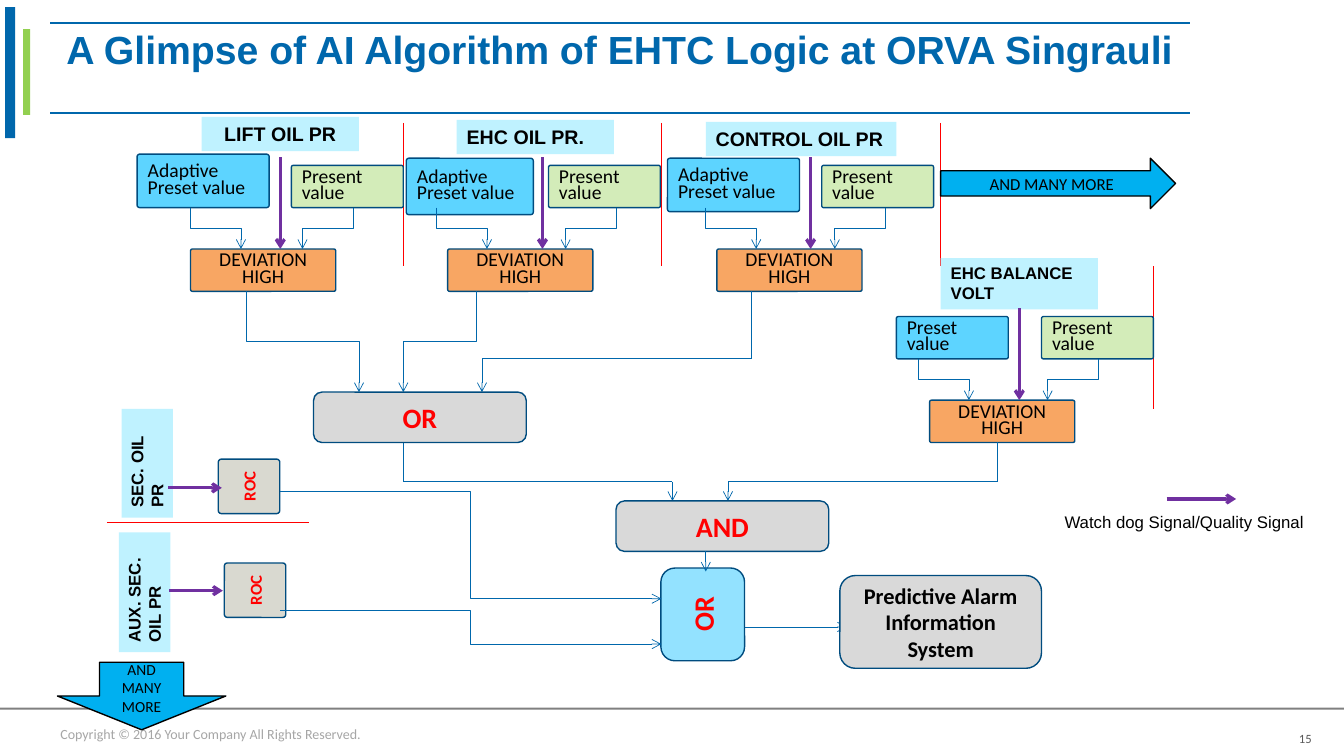
from dataclasses import dataclass
from itertools import pairwise
from typing import Optional

from lxml.etree import SubElement
from pptx import Presentation
from pptx.dml.color import RGBColor
from pptx.enum.shapes import MSO_CONNECTOR as CONN, MSO_SHAPE as SHP
from pptx.enum.text import MSO_ANCHOR as ANC, PP_ALIGN as AL
from pptx.oxml.ns import qn
from pptx.util import Inches, Pt

COLORS = {
    "blue": "0067AC", "edge": "004C7F", "green": "92D050", "gray": "808080",
    "preset": "5DD4FF", "present": "D3ECB9", "deviation": "F8A663",
    "label": "BFF2FF", "gate": "D9D9D9", "roc": "D9D9D0", "or": "93E2FF",
    "arrow": "00B0F0", "red": "FF0000", "purple": "7030A0", "black": "000000",
    "footer": "A6A6A6", "number": "595959",
}


@dataclass
class Style:
    size: float = 14
    font: str = "Calibri"
    color: str = "black"
    bold: bool = False
    align: AL = AL.LEFT
    anchor: ANC = ANC.MIDDLE
    spacing: Optional[float] = None
    insets: tuple = (0.1, 0.05, 0.1, 0.05)


@dataclass
class Box:
    text: str
    at: tuple
    fill: str
    style: Style
    shape: SHP = SHP.ROUNDED_RECTANGLE
    line: Optional[str] = "edge"
    corner: Optional[float] = None
    turn: float = 0


@dataclass
class Signal:
    name: str
    label_at: tuple
    label_style: Style
    preset: str
    preset_at: tuple
    present_x: float
    deviation: str
    deviation_x: float
    feeds: tuple
    watchdog_x: float
    divider: tuple
    drop: float = 0


VALUE = Style(spacing=0.7)
DEVIATION = Style(align=AL.CENTER, spacing=0.7)
LABEL = Style(font="Arial", bold=True, anchor=ANC.TOP)
CENTER_LABEL = Style(font="Arial", bold=True, anchor=ANC.TOP, align=AL.CENTER)
SMALL_LABEL = Style(12, "Arial", bold=True, anchor=ANC.TOP)
GATE = Style(20, color="red", bold=True, align=AL.CENTER)
ROC = Style(12, color="red", bold=True, align=AL.CENTER)

prs = Presentation()
prs.slide_width, prs.slide_height = Inches(13.33), Inches(7.5)
slide = prs.slides.add_slide(prs.slide_layouts[6])


def rgb(name: str) -> RGBColor:
    return RGBColor.from_string(COLORS[name])


def write(tf, text: str, st: Style, wrap: bool = True) -> None:
    left, top, right, bottom = map(Inches, st.insets)
    frame = {"word_wrap": wrap, "vertical_anchor": st.anchor, "margin_left": left,
             "margin_top": top, "margin_right": right, "margin_bottom": bottom}
    for key, value in frame.items():
        setattr(tf, key, value)
    for i, line in enumerate(text.split("\n")):
        p = tf.add_paragraph() if i else tf.paragraphs[0]
        p.alignment = st.align
        p.line_spacing = st.spacing
        r = p.add_run()
        r.text = line
        for key, value in {"size": Pt(st.size), "name": st.font, "bold": st.bold}.items():
            setattr(r.font, key, value)
        r.font.color.rgb = rgb(st.color)


def add_text(text: str, at: tuple, st: Style, wrap: bool = True) -> None:
    write(slide.shapes.add_textbox(*map(Inches, at)).text_frame, text, st, wrap)


def add_box(b: Box) -> None:
    s = slide.shapes.add_shape(b.shape, *map(Inches, b.at))
    s.shadow.inherit = False
    s.rotation = b.turn
    s.fill.solid()
    s.fill.fore_color.rgb = rgb(b.fill)
    if b.line:
        s.line.color.rgb = rgb(b.line)
        s.line.width = Pt(1)
    else:
        s.line.fill.background()
    if b.corner is not None:
        s.adjustments[0] = b.corner
    if b.text:
        write(s.text_frame, b.text, b.style)


def add_line(start: tuple, end: tuple, color: str = "blue", width: float = 0.5,
             arrow: bool = False, kind: CONN = CONN.STRAIGHT):
    c = slide.shapes.add_connector(kind, *map(Inches, (*start, *end)))
    c.line.color.rgb = rgb(color)
    c.line.width = Pt(width)
    pr = c.element.spPr
    if arrow:
        SubElement(pr.find(qn("a:ln")), qn("a:tailEnd"), type="arrow")
    SubElement(pr, qn("a:effectLst"))
    return c


def add_drop(start: tuple, end: tuple) -> None:
    """Elbow arrow that leaves and arrives vertically."""
    (x1, y1), (x2, y2) = start, end
    cx, cy = (x1 + x2) / 2, (y1 + y2) / 2
    w, h = y2 - y1, abs(x2 - x1)
    c = add_line((cx - w / 2, cy - h / 2), (cx + w / 2, cy + h / 2),
                 arrow=True, kind=CONN.ELBOW)
    xfrm = c.element.spPr.find(qn("a:xfrm"))
    xfrm.set("rot", str((270 if x2 > x1 else 90) * 60000))
    if x2 > x1:
        xfrm.set("flipH", "1")


def add_route(*points: tuple) -> None:
    for start, end in pairwise(points):
        add_line(start, end, arrow=end == points[-1])


def add_watchdog(start: tuple, end: tuple) -> None:
    add_line(start, end, "purple", 2.25, True)


def add_signal(g: Signal) -> None:
    top, dev_y = 1.64 + g.drop, 2.47 + g.drop
    x, y = g.divider
    add_line((x, y), (x, y + 1.42), "red")
    add_box(Box(g.name, g.label_at, "label", g.label_style, SHP.RECTANGLE, None))
    add_box(Box(g.preset, g.preset_at, "preset", VALUE, corner=0.045))
    add_box(Box("Present value", (g.present_x, top, 1.11, 0.42), "present", VALUE, corner=0.045))
    add_box(Box(g.deviation, (g.deviation_x, dev_y, 1.44, 0.42), "deviation",
                DEVIATION, corner=0.045))
    for feed, step in zip(g.feeds, (0.5, -0.5)):
        add_drop((feed, top + 0.42), (feed + step, dev_y))
    add_watchdog((g.watchdog_x, 1.56 + g.drop), (g.watchdog_x, dev_y))


# Frame, title and footer
for at, color in (((0, 7.02, 13.33, 0.02), "gray"), ((0.23, 0.29, 0.07, 0.85), "green"),
                  ((0.05, 0.07, 0.1, 1.3), "blue")):
    add_box(Box("", at, color, VALUE, SHP.RECTANGLE, None))
for y in (0.23, 1.12):
    add_line((0.5, y), (11.8, y), width=1.5)
add_text("A Glimpse of AI Algorithm of EHTC Logic at ORVA Singrauli", (0.56, 0.25, 11.24, 0.73),
         Style(28, "Arial", "blue", True, anchor=ANC.TOP, spacing=0.9))
add_text("Copyright © 2016 Your Company All Rights Reserved.", (0.5, 7.15, 12.52, 0.27),
         Style(10, color="footer"))
add_text("15", (12.46, 7.17, 0.55, 0.25),
         Style(9, color="number", align=AL.RIGHT, anchor=ANC.TOP, insets=(0.08, 0.08, 0, 0)))

# Oil pressure and balance signals
ADAPTIVE, HIGH = "Adaptive Preset value", "DEVIATION HIGH"
for signal in (
    Signal("LIFT OIL PR", (2, 1.16, 1.56, 0.34), CENTER_LABEL, ADAPTIVE, (1.36, 1.53, 1.31, 0.53),
           2.89, "DEVIATION\nHIGH", 1.89, (1.89, 3.5), 2.78, (4, 1.22)),
    Signal("EHC OIL PR.", (4.53, 1.19, 1.56, 0.34), LABEL, ADAPTIVE, (4.03, 1.57, 1.26, 0.56),
           5.44, HIGH, 4.44, (4.33, 6.11), 5.38, (6.56, 1.22)),
    Signal("CONTROL OIL PR", (7, 1.21, 1.89, 0.34), LABEL, ADAPTIVE, (6.62, 1.57, 1.31, 0.53),
           8.15, HIGH, 7.11, (7, 8.78), 8.04, (9.33, 1.22)),
    Signal("EHC BALANCE VOLT", (9.33, 2.56, 1.56, 0.51), SMALL_LABEL, "Preset value",
           (8.89, 3.14, 1.11, 0.42), 10.33, HIGH, 9.22, (9.11, 10.89), 10.11, (11.44, 2.64), 1.5),
):
    add_signal(signal)

# Links between the gates
add_drop((2.44, 2.89), (3.56, 3.89))
add_drop((4.72, 2.89), (4, 3.89))
add_route((7.45, 2.89), (7.45, 3.56), (4.78, 3.56), (4.78, 3.89))
add_route((9.89, 4.39), (9.89, 4.78), (7.22, 4.78), (7.22, 4.97))
add_route((4, 4.39), (4, 4.78), (6.67, 4.78), (6.67, 4.97))
add_route((7.33, 6.22), (8.4, 6.22))

# Gates, rate-of-change blocks and result
for box in (
    Box("OR", (3.11, 3.89, 2.11, 0.5), "gate", GATE),
    Box("AND", (6.11, 4.97, 2.11, 0.5), "gate", GATE),
    Box("OR", (6.51, 5.68, 0.92, 0.83), "or", GATE, turn=270),
    Box("Predictive Alarm Information System", (8.33, 5.71, 2, 0.92), "gate",
        Style(16, bold=True, align=AL.CENTER)),
    Box("SEC. OIL PR", (0.92, 4.34, 1.08, 0.51), "label", SMALL_LABEL, SHP.RECTANGLE, None, turn=270),
    Box("AUX. SEC. OIL PR", (0.84, 5.62, 1.19, 0.51), "label", SMALL_LABEL, SHP.RECTANGLE, None,
        turn=270),
    Box("ROC", (2.2, 4.52, 0.54, 0.61), "roc", ROC, corner=0.056, turn=270),
    Box("ROC", (2.26, 5.55, 0.54, 0.61), "roc", ROC, corner=0.056, turn=270),
    Box("AND MANY MORE", (9.33, 1.57, 2.33, 0.5), "arrow", Style(12, align=AL.CENTER),
        SHP.RIGHT_ARROW, "black"),
    Box("AND MANY MORE", (0.57, 6.57, 1.67, 0.67), "arrow", Style(11, align=AL.CENTER),
        SHP.DOWN_ARROW, "black"),
):
    add_box(box)
add_route((7, 5.47), (7, 5.67))
for y1, y2 in ((4.88, 5.94), (6.06, 6.39)):
    add_line((2.78, y1), (6.56, y2), arrow=True, kind=CONN.ELBOW)
add_line((1.06, 5.18), (3.06, 5.18), "red")

# Watchdog signals and legend
for x, y, length in ((1.67, 4.84, 0.53), (1.68, 5.86, 0.53), (11.57, 4.95, 0.69)):
    add_watchdog((x, y), (x + length, y))
add_text("Watch dog Signal/Quality Signal", (10.46, 5.03, 2.59, 0.3),
         Style(12, "Arial", anchor=ANC.TOP), wrap=False)

prs.save("out.pptx")
